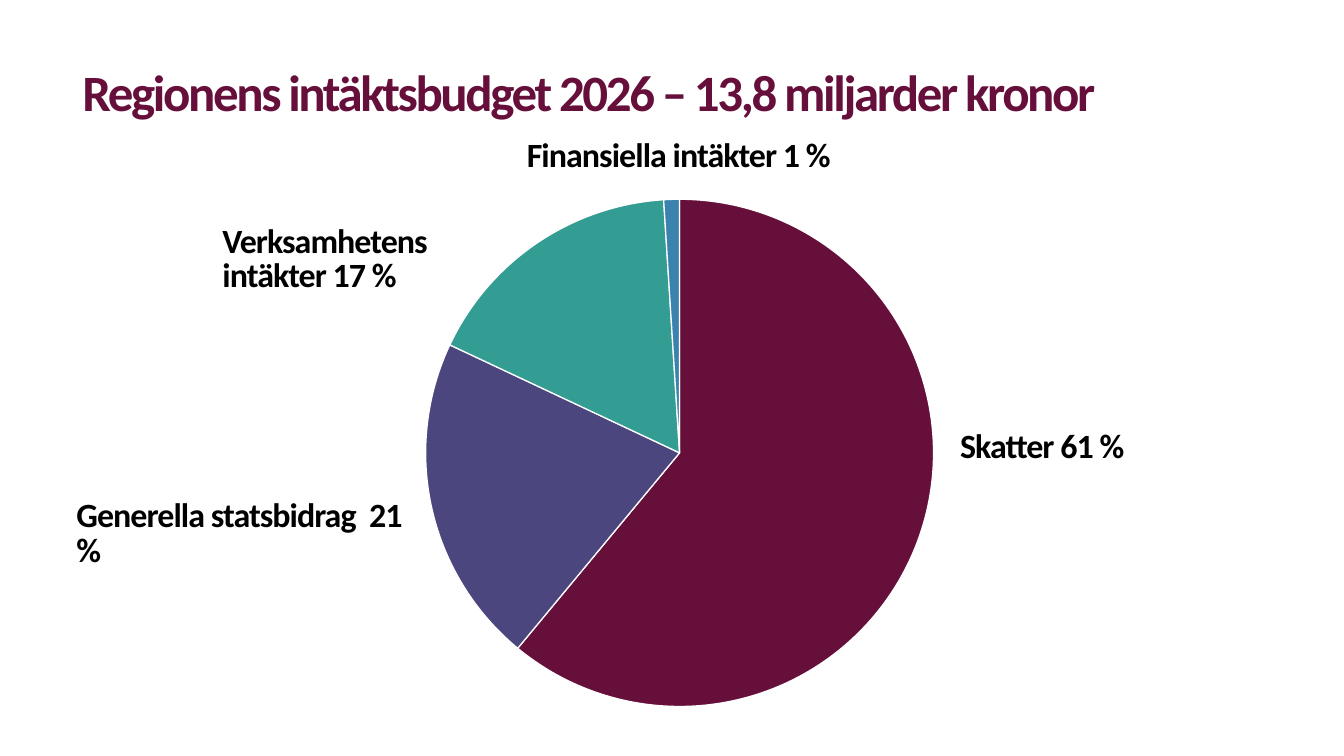
from dataclasses import dataclass

from pptx import Presentation
from pptx.chart.data import CategoryChartData
from pptx.dml.color import RGBColor as RGB
from pptx.enum.chart import XL_CHART_TYPE as ChartType
from pptx.oxml import parse_xml
from pptx.oxml.ns import nsdecls
from pptx.util import Inches, Pt


@dataclass(frozen=True)
class Theme:
    font: str = "Calibri"
    wine: RGB = RGB(0x67, 0x0F, 0x3B)
    purple: RGB = RGB(0x4B, 0x46, 0x7D)
    teal: RGB = RGB(0x33, 0x9D, 0x94)
    blue: RGB = RGB(0x3C, 0x82, 0xAF)
    black: RGB = RGB(0, 0, 0)
    white: RGB = RGB(0xFF, 0xFF, 0xFF)
    title_size: int = 60
    label_size: int = 40
    chart_size: int = 10


theme = Theme()
deck = Presentation()
deck.slide_width, deck.slide_height = Inches(21.99), Inches(12.37)
slide = deck.slides.add_slide(deck.slide_layouts[6])


def add_text(text, place, size, color, line_spacing, tracking, space_after=0, inset=True):
    """Add a bold one-paragraph text box; tracking is in hundredths of a point."""
    frame = slide.shapes.add_textbox(*map(Inches, place)).text_frame
    frame.word_wrap = True
    if not inset:
        for side in ("left", "top", "right", "bottom"):
            setattr(frame, f"margin_{side}", 0)
    paragraph = frame.paragraphs[0]
    paragraph.line_spacing = line_spacing
    paragraph.space_after = Pt(space_after)
    run = paragraph.add_run()
    run.text = text
    style = {"name": theme.font, "size": Pt(size), "bold": True}
    for key, value in style.items():
        setattr(run.font, key, value)
    run.font.color.rgb = color
    run.font._element.set("spc", str(tracking))


add_text("Regionens intäktsbudget 2026 – 13,8 miljarder kronor",
         (1.25, 1.09, 17.32, 0.92), theme.title_size, theme.wine, 0.85, -280)

# Income shares, clockwise from the top
shares = [(61, theme.wine), (21, theme.purple), (17, theme.teal), (1, theme.blue)]
budget = CategoryChartData()
budget.categories = [str(number) for number in range(1, len(shares) + 1)]
budget.add_series("Series 1", [share for share, _ in shares])
pie = slide.shapes.add_chart(ChartType.PIE, Inches(5.56), Inches(3.25),
                             Inches(10.87), Inches(8.55), budget).chart
pie.has_legend = False
pie.has_title = False
pie.font.name = theme.font
pie.font.size = Pt(theme.chart_size)
pie.font.color.rgb = theme.black

plot = pie.plots[0]
plot.vary_by_categories = True
for index, (_, color) in enumerate(shares):
    slice_format = plot.series[0].points[index].format
    slice_format.fill.solid()
    slice_format.fill.fore_color.rgb = color
    slice_format.line.color.rgb = theme.white
    slice_format.line.width = Pt(1.5)

# Fixed inner plot area, as fractions of the chart
plot_area = pie._chartSpace.chart.plotArea
for automatic_layout in plot_area.xpath("c:layout"):
    plot_area.remove(automatic_layout)
plot_area.insert(0, parse_xml(
    f'<c:layout {nsdecls("c")}><c:manualLayout><c:layoutTarget val="inner"/>'
    '<c:xMode val="edge"/><c:yMode val="edge"/><c:x val="0.096"/><c:y val="0"/>'
    '<c:w val="0.831"/><c:h val="0.972"/></c:manualLayout></c:layout>'))

labels = [
    ("Skatter 61 %", (15.61, 7.01, 3.35, 0.51), True),
    ("Generella statsbidrag  21 %", (1.25, 8.19, 5.8, 0.92), False),
    ("Verksamhetens intäkter 17 %", (3.64, 3.7, 4.5, 0.92), False),
    ("Finansiella intäkter 1 %", (8.62, 2.3, 5.45, 0.92), False),
]
for label, place, inset in labels:
    add_text(label, place, theme.label_size, theme.black, 0.84, -110, 23, inset)

deck.save("out.pptx")
